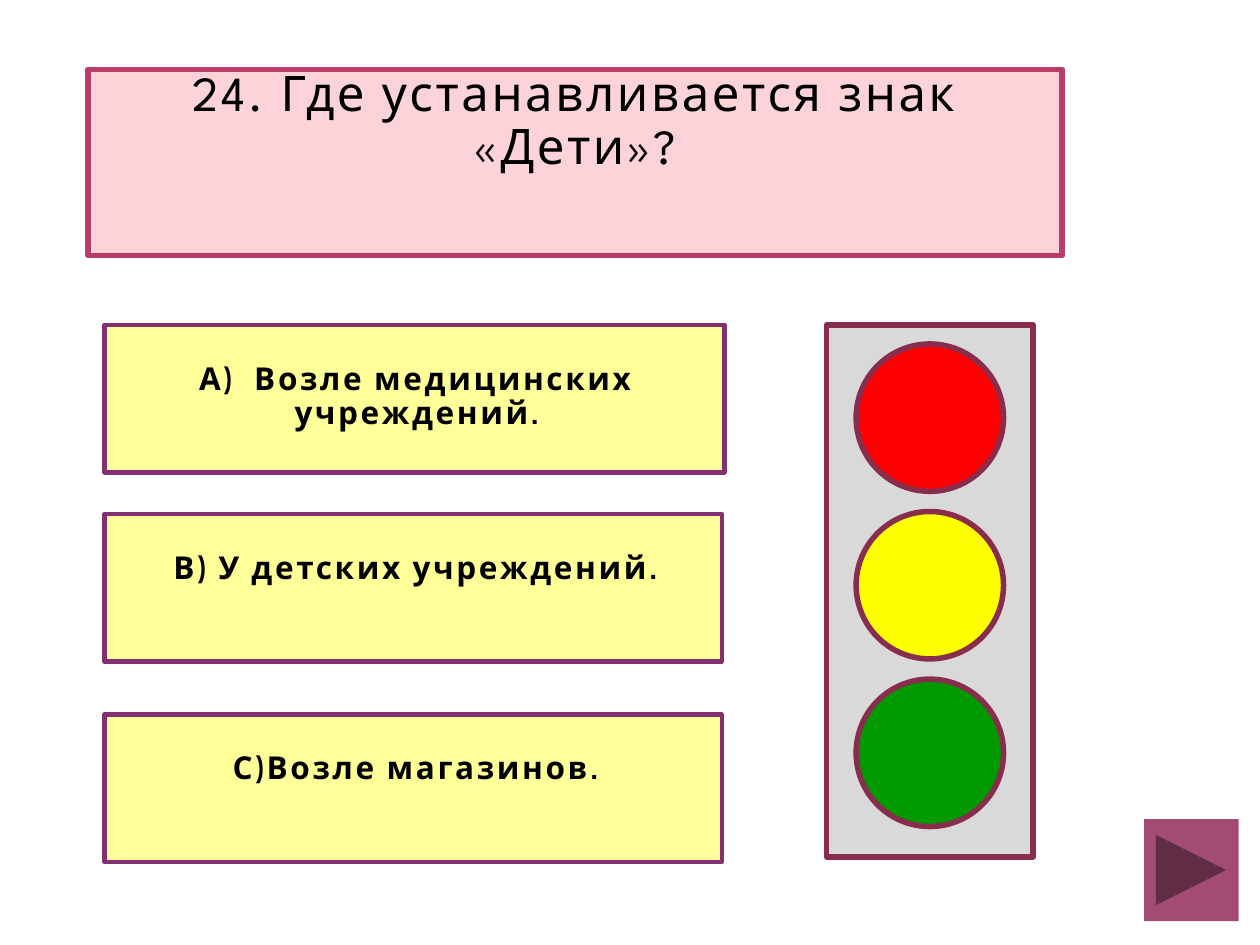
from dataclasses import dataclass

from pptx import Presentation
from pptx import util as u
from pptx.dml.color import RGBColor
from pptx.enum import shapes, text


@dataclass(frozen=True)
class Theme:
    title_font: str = "League Spartan"
    answer_font: str = "Cabin"
    title_size: int = 28
    answer_size: int = 18
    ink: str = "000000"
    title_fill: str = "FDD3DA"
    title_line: str = "B83D68"
    answer_fill: str = "FFFF99"
    answer_line: str = "852F73"
    housing: str = "D9D9D9"
    light_line: str = "882D4D"
    red: str = "FF0000"
    yellow: str = "FFFF00"
    green: str = "009900"
    button: str = "A34B73"
    thick: float = 3.15
    thin: float = 2.5


class QuizSlide:
    def __init__(self, slide, theme):
        self.slide = slide
        self.theme = theme

    def panel(self, kind, box, fill, line=None, width=0):
        shape = self.slide.shapes.add_shape(kind, *map(u.Inches, box))
        shape.shadow.inherit = False
        shape.fill.solid()
        shape.fill.fore_color.rgb = RGBColor.from_string(fill)
        if line:
            shape.line.color.rgb = RGBColor.from_string(line)
            shape.line.width = u.Pt(width)
        else:
            shape.line.fill.background()
        return shape

    def label(self, shape, wording, font, size, bold, insets):
        frame = shape.text_frame
        frame.word_wrap = True
        frame.vertical_anchor = text.MSO_ANCHOR.TOP
        (frame.margin_left, frame.margin_top,
         frame.margin_right, frame.margin_bottom) = map(u.Inches, insets)
        frame.text = wording
        paragraph = frame.paragraphs[0]
        paragraph.alignment = text.PP_ALIGN.CENTER
        paragraph.line_spacing = 0.9
        for run in paragraph.runs:
            run.font.name = font
            run.font.size = u.Pt(size)
            run.font.bold = bold
            run.font.color.rgb = RGBColor.from_string(self.theme.ink)
            run._r.get_or_add_rPr().set("spc", "150")

    def title(self, wording, box):
        theme = self.theme
        shape = self.panel(shapes.MSO_SHAPE.RECTANGLE, box,
                           theme.title_fill, theme.title_line, theme.thick)
        self.label(shape, wording, theme.title_font, theme.title_size, False,
                   (0.05, 0, 0.05, 0))

    def answer(self, wording, box):
        theme = self.theme
        shape = self.panel(shapes.MSO_SHAPE.RECTANGLE, box,
                           theme.answer_fill, theme.answer_line, theme.thin)
        self.label(shape, wording, theme.answer_font, theme.answer_size, True,
                   (0.13, 0.3, 0.1, 0.05))

    def traffic_light(self, box):
        theme = self.theme
        self.panel(shapes.MSO_SHAPE.RECTANGLE, box,
                   theme.housing, theme.light_line, theme.thick)
        left, top, width, _ = box
        diameter, pitch = 1.17, 1.33
        lamp_left = left + (width - diameter) / 2
        for index, color in enumerate((theme.red, theme.yellow, theme.green)):
            lamp_top = top + 0.15 + index * pitch
            self.panel(shapes.MSO_SHAPE.OVAL,
                       (lamp_left, lamp_top, diameter, diameter),
                       color, theme.light_line, theme.thick)

    def next_button(self, box):
        self.panel(shapes.MSO_SHAPE.ACTION_BUTTON_FORWARD_OR_NEXT, box,
                   self.theme.button)


def main():
    presentation = Presentation()
    presentation.slide_width = u.Inches(10)
    presentation.slide_height = u.Inches(7.5)
    slide = presentation.slides.add_slide(presentation.slide_layouts[6])
    quiz = QuizSlide(slide, Theme())

    quiz.title("24. Где устанавливается знак «Дети»?", (0.7, 0.55, 7.73, 1.48))
    answers = (
        ("А)  Возле медицинских учреждений.", 2.58, 4.92),
        ("В) У детских учреждений.", 4.08, 4.9),
        ("С)Возле магазинов.", 5.67, 4.9),
    )
    for wording, top, width in answers:
        quiz.answer(wording, (0.83, top, width, 1.17))
    quiz.traffic_light((6.56, 2.58, 1.64, 4.22))
    quiz.next_button((9.08, 6.5, 0.75, 0.81))

    presentation.save("out.pptx")


if __name__ == "__main__":
    main()
